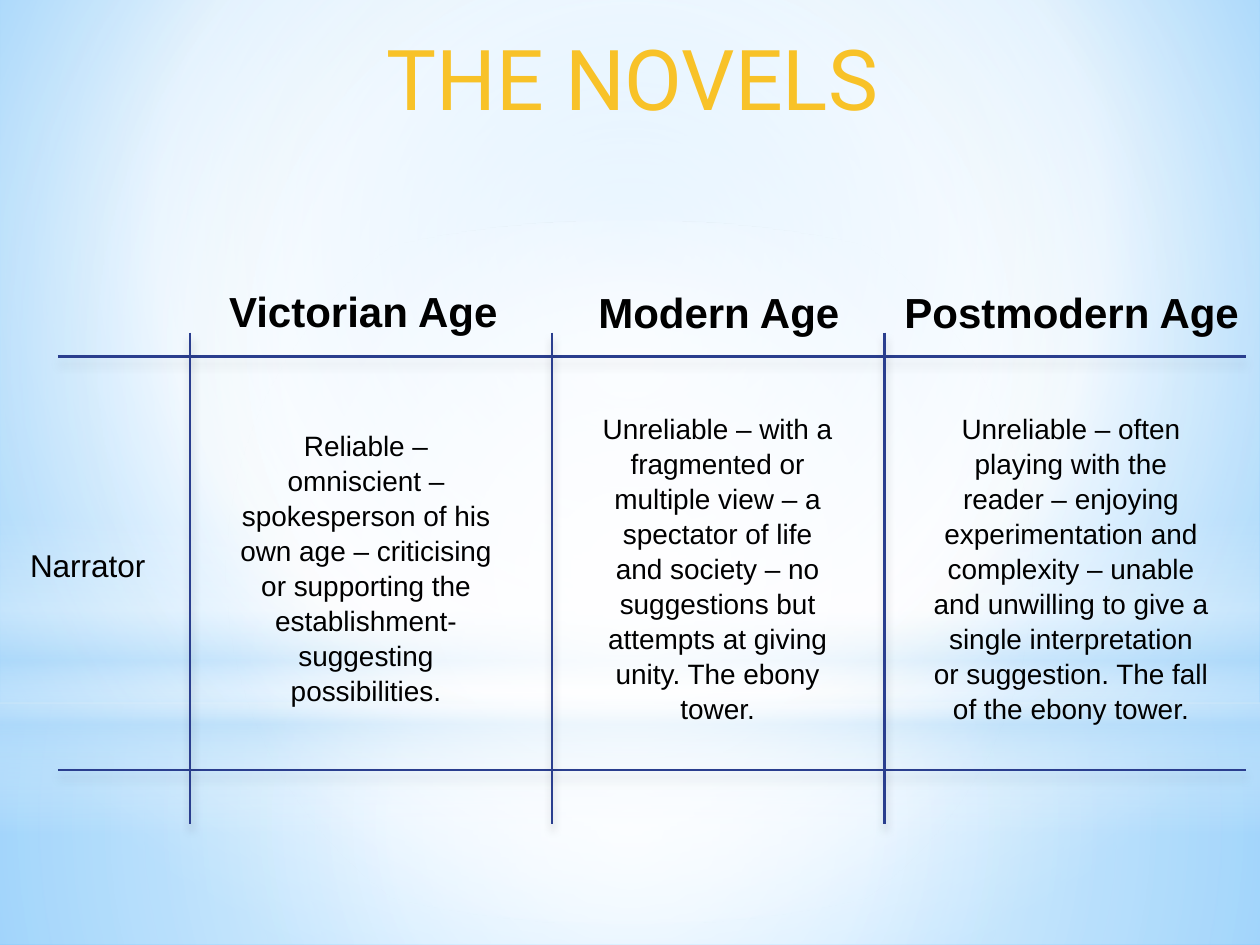
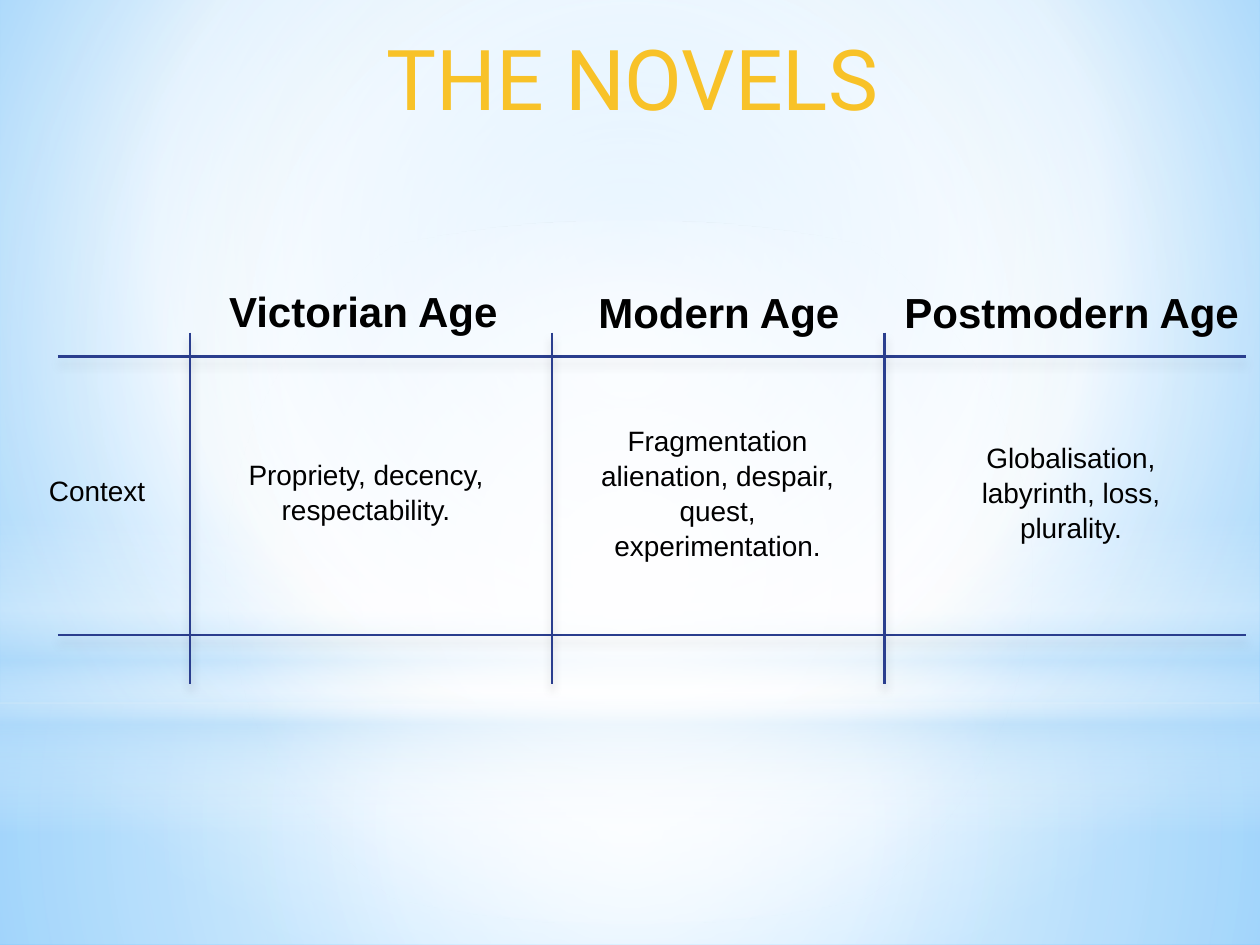
import dataclasses

import lxml.etree
import pptx
import pptx.dml.color
import pptx.enum.dml
import pptx.enum.shapes
import pptx.enum.text
import pptx.oxml.ns
import pptx.shapes.connector
import pptx.slide
import pptx.util

COLOURS = {"title": "F8C228", "text": "000000", "rule": "2A3E8E", "shadow": "000000",
           "white": "FFFFFF", "haze": "B4DCFA", "sky": "9ED5FF", "deep": "5BB9FF"}

# Grid: 100 columns by 75 rows
COLUMNS, ROWS = 100, 75
WIDTH, HEIGHT = pptx.util.Inches(10), pptx.util.Inches(7.5)
LINE_ROWS, INSET_ROWS = 2.7, 1
HEADER_RULE, RULES_TOP = 28.3, 26.4
RULE_LEFT, RULE_RIGHT = 4.6, 98.9

TITLE = {"name": "Roboto", "size": pptx.util.Pt(48)}
HEADING = {"name": "Arial", "size": pptx.util.Pt(24), "bold": True}
BODY = {"name": "Arial", "size": pptx.util.Pt(16)}
LABEL = {"name": "Arial", "size": pptx.util.Pt(18)}

CENTRE = pptx.enum.text.PP_ALIGN.CENTER
LEFT = pptx.enum.text.PP_ALIGN.LEFT
RECTANGLE = pptx.enum.shapes.MSO_SHAPE.RECTANGLE
OVAL = pptx.enum.shapes.MSO_SHAPE.OVAL


@dataclasses.dataclass(frozen=True)
class Area:
    left: float
    top: float
    width: float
    height: float


@dataclasses.dataclass(frozen=True)
class Gradient:
    stops: tuple[tuple[int, str, int], ...]  # position, colour, opacity in percent
    focus: tuple[int, int, int, int] | None = (50, 50, 50, 50)  # None: top to bottom


@dataclasses.dataclass(frozen=True)
class Glow:
    shape: pptx.enum.shapes.MSO_SHAPE
    area: Area
    gradient: Gradient


@dataclasses.dataclass(frozen=True)
class Age:
    heading: str
    rule: float
    heading_area: Area
    text_left: float
    text_width: float


@dataclasses.dataclass(frozen=True)
class Entry:
    text: str
    lines: int


@dataclasses.dataclass(frozen=True)
class Topic:
    label: str
    label_area: Area
    label_format: dict
    middle: float
    bottom_rule: float
    rules_end: float
    entries: tuple[Entry, ...]


BACKDROP = Gradient(((0, "sky", 100), (60, "white", 100), (100, "deep", 100)), (20, 10, 20, 60))
GLOWS = (
    Glow(RECTANGLE, Area(0, 55.8, 100, 19.2),
         Gradient(((0, "white", 91), (37, "white", 76), (100, "haze", 79)))),
    Glow(RECTANGLE, Area(0, 0, 100, 55.8),
         Gradient(((0, "white", 89), (48, "white", 62), (100, "haze", 79)))),
    Glow(RECTANGLE, Area(0, 41.2, 100, 25),
         Gradient(((0, "white", 0), (29, "white", 30), (45, "haze", 40),
                   (55, "white", 26), (65, "haze", 60), (100, "white", 0)), None)),
    Glow(OVAL, Area(0, 17.5, 100, 55.8),
         Gradient(((0, "white", 100), (56, "white", 0)))),
)

AGES = (
    Age("Victorian Age", 15.1, Area(17.2, 22, 23.5, 5), 17.6, 22.9),
    Age("Modern Age", 43.8, Area(46.5, 22.1, 21.3, 5), 46.7, 20.5),
    Age("Postmodern Age", 70.2, Area(70.8, 22.1, 28.8, 5), 73.1, 23.8),
)

TOPICS = (
    Topic("Narrator", Area(1.4, 42.7, 11.3, 4), LABEL, 44.75, 61.1, 65.4, (
        Entry("Reliable – omniscient – spokesperson of his own age – criticising or "
              "supporting the establishment- suggesting possibilities.", 8),
        Entry("Unreliable – with a fragmented or multiple view – a spectator of life and "
              "society – no suggestions but attempts at giving unity. The ebony tower.", 9),
        Entry("Unreliable – often playing with the reader – enjoying experimentation and "
              "complexity – unable and unwilling to give a single interpretation or "
              "suggestion. The fall of the ebony tower.", 9))),
    Topic("Context", Area(2.9, 37, 9.8, 3.7), BODY, 38.9, 50.4, 54.3, (
        Entry("Propriety, decency, respectability.", 2),
        Entry("Fragmentation alienation, despair, quest, experimentation.", 4),
        Entry("Globalisation, labyrinth, loss, plurality.", 3))),
)


def across(columns: float) -> int:
    return round(WIDTH * columns / COLUMNS)


def down(rows: float) -> int:
    return round(HEIGHT * rows / ROWS)


def place(area: Area) -> tuple[int, int, int, int]:
    return across(area.left), down(area.top), across(area.width), down(area.height)


def rgb(colour: str) -> pptx.dml.color.RGBColor:
    return pptx.dml.color.RGBColor.from_string(COLOURS[colour])


def add_element(parent, tag: str, **attributes):
    values = {name: str(value) for name, value in attributes.items()}
    return lxml.etree.SubElement(parent, pptx.oxml.ns.qn(tag), values)


def add_colour(parent, colour: str, opacity: int) -> None:
    element = add_element(parent, "a:srgbClr", val=COLOURS[colour])
    add_element(element, "a:alpha", val=opacity * 1000)


def paint(fill, owner, gradient: Gradient) -> None:
    """Fill the owner element with the stops of a gradient."""
    fill.gradient()
    element = owner.find(".//" + pptx.oxml.ns.qn("a:gradFill"))
    for child in list(element):
        element.remove(child)
    stops = add_element(element, "a:gsLst")
    for position, colour, opacity in gradient.stops:
        add_colour(add_element(stops, "a:gs", pos=position * 1000), colour, opacity)
    if gradient.focus is None:
        add_element(element, "a:lin", ang=90 * 60000, scaled=0)
    else:
        centre = add_element(element, "a:path", path="circle")
        sides = {side: share * 1000 for side, share in zip("ltrb", gradient.focus)}
        add_element(centre, "a:fillToRect", **sides)


def draw_background(page: pptx.slide.Slide) -> None:
    paint(page.background.fill, page._element, BACKDROP)
    for glow in GLOWS:
        shape = page.shapes.add_shape(glow.shape, *place(glow.area))
        shape.shadow.inherit = False
        shape.line.fill.background()
        paint(shape.fill, shape._element, glow.gradient)


def draw_text(page: pptx.slide.Slide, text: str, area: Area, style: dict,
              colour: str = "text", align=CENTRE, wrap: bool = True,
              spacing: float = 1.04) -> None:
    box = page.shapes.add_textbox(*place(area))
    box.text_frame.word_wrap = wrap
    para = box.text_frame.paragraphs[0]
    para.alignment = align
    para.line_spacing = spacing
    span = para.add_run()
    span.text = text
    for name, value in style.items():
        setattr(span.font, name, value)
    span.font.color.rgb = rgb(colour)


def draw_rule(page: pptx.slide.Slide, left: float, top: float,
              right: float, bottom: float) -> pptx.shapes.connector.Connector:
    rule = page.shapes.add_connector(pptx.enum.shapes.MSO_CONNECTOR.STRAIGHT, across(left),
                                     down(top), across(right), down(bottom))
    rule.line.color.rgb = rgb("rule")
    rule.line.width = pptx.util.Pt(1.25)
    effects = add_element(rule._element.spPr, "a:effectLst")
    shadow = add_element(effects, "a:outerShdw", blurRad=pptx.util.Pt(5),
                         dist=pptx.util.Pt(4), dir=90 * 60000, rotWithShape=0)
    add_colour(shadow, "shadow", 20)
    return rule


def draw_topic(page: pptx.slide.Slide, topic: Topic) -> None:
    draw_background(page)
    draw_text(page, "THE NOVELS", Area(7, 1.6, 86.4, 8.2), TITLE, "title", spacing=1)

    # Headings and entries, each entry centred on the row's middle
    draw_text(page, topic.label, topic.label_area, topic.label_format, align=LEFT, wrap=False)
    for age, entry in zip(AGES, topic.entries):
        draw_text(page, age.heading, age.heading_area, HEADING, align=LEFT, wrap=False)
        height = entry.lines * LINE_ROWS + INSET_ROWS
        area = Area(age.text_left, topic.middle - height / 2, age.text_width, height)
        draw_text(page, entry.text, area, BODY)

    # Ruled grid
    for row in (HEADER_RULE, topic.bottom_rule):
        draw_rule(page, RULE_LEFT, row, RULE_RIGHT, row)
    for age in AGES:
        draw_rule(page, age.rule, RULES_TOP, age.rule, topic.rules_end)


def main() -> None:
    deck = pptx.Presentation()
    deck.slide_width, deck.slide_height = WIDTH, HEIGHT
    for topic in TOPICS:
        draw_topic(deck.slides.add_slide(deck.slide_layouts[6]), topic)
    deck.save("out.pptx")


if __name__ == "__main__":
    main()
